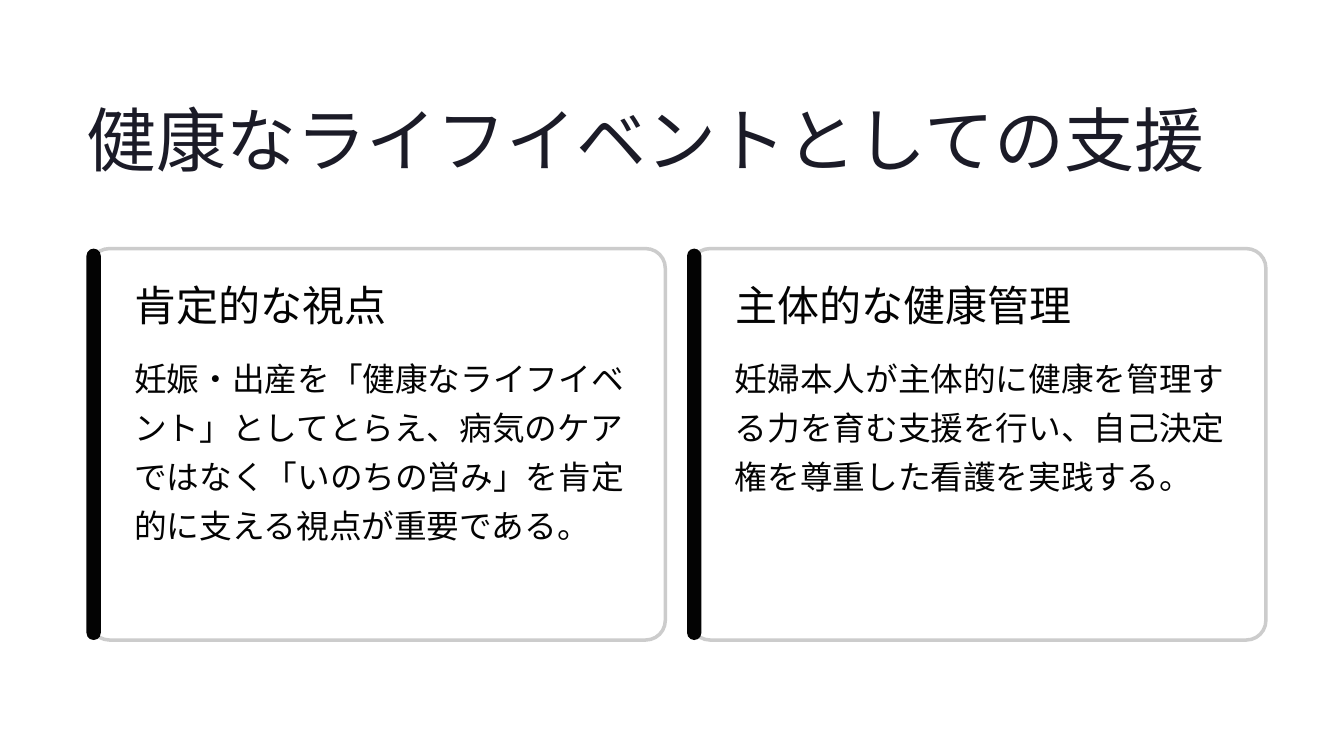
"""Build a slide with a title and two accent-barred text cards."""
from lxml import etree
from pptx import Presentation
from pptx.dml.color import RGBColor
from pptx.enum.shapes import MSO_SHAPE
from pptx.oxml.ns import qn
from pptx.util import Pt

PX = 9144
INK = "030303"
CARD_PITCH = 715
CARDS = [
    ("肯定的な視点",
     "妊娠・出産を「健康なライフイベント」としてとらえ、病気のケアではなく「いのちの営み」を肯定的に支える視点が重要である。",
     277),
    ("主体的な健康管理",
     "妊婦本人が主体的に健康を管理する力を育む支援を行い、自己決定権を尊重した看護を実践する。",
     208),
]

rgb = RGBColor.from_string


def add_text(box, text, font, size, spacing, color=INK, wrap=True):
    tf = s.shapes.add_textbox(*[v * PX for v in box]).text_frame
    tf.margin_left = tf.margin_right = tf.margin_top = tf.margin_bottom = 0
    tf.word_wrap = wrap
    tf.text = text
    p = tf.paragraphs[0]
    p.line_spacing = Pt(spacing)
    r = p.runs[0]
    r.font.name = font
    r.font.size = Pt(size)
    r.font.color.rgb = rgb(color)


def add_rounded(box, radius, color):
    sp = s.shapes.add_shape(MSO_SHAPE.ROUNDED_RECTANGLE, *[v * PX for v in box])
    sp.adjustments[0] = radius
    sp.shadow.inherit = False
    sp.fill.solid()
    sp.fill.fore_color.rgb = rgb(color)
    sp.line.fill.background()
    return sp


prs = Presentation()
prs.slide_width = 1600 * PX
prs.slide_height = 900 * PX
s = prs.slides.add_slide(prs.slide_layouts[6])
s.background.fill.solid()
s.background.fill.fore_color.rgb = rgb("FFFFFF")

add_text((103, 101, 1395, 229), "健康なライフイベントとしての支援", "Inter", 60, 82, "1B1B27")

for i, (heading, body, body_height) in enumerate(CARDS):
    x = 103 + i * CARD_PITCH
    card = add_rounded((x + 4, 296, 685, 466), 0.05, "FFFFFF")
    card.line.color.rgb = rgb("CCCCCC")
    card.line.width = Pt(3)
    fill_color = card.fill._xPr.find(qn("a:solidFill"))[0]
    etree.SubElement(fill_color, qn("a:alpha"), val="95000")
    add_rounded((x, 296, 17, 466), 0.5, INK)
    add_text((x + 57, 336, 462, 68), heading, "Inter", 36, 41, wrap=False)
    add_text((x + 57, 416, 590, body_height), body, "Cabin", 28, 42)

prs.save("out.pptx")
